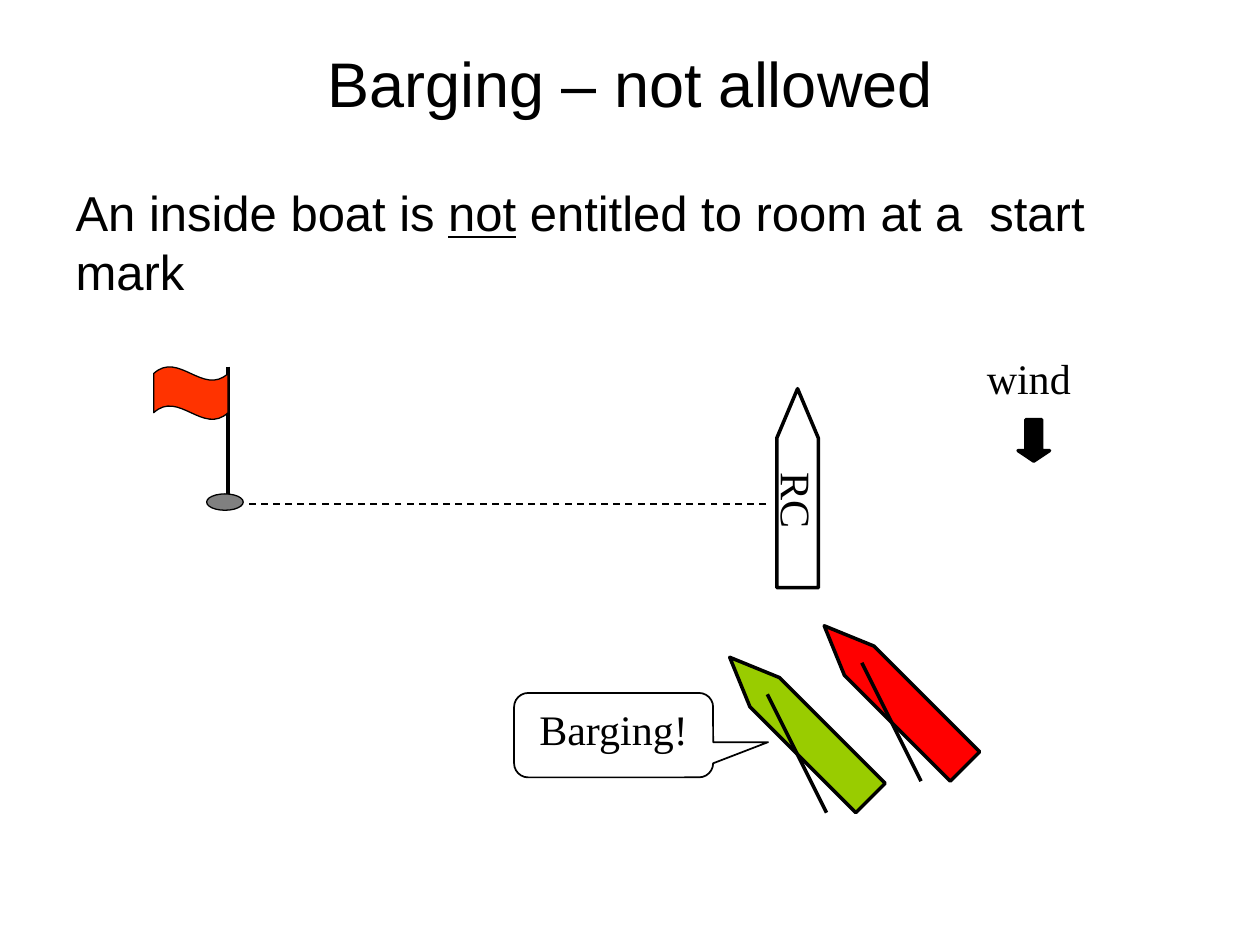
from pptx import Presentation
from pptx.dml.color import RGBColor
from pptx.enum.dml import MSO_LINE
from pptx.enum.shapes import MSO_CONNECTOR, MSO_SHAPE
from pptx.enum.text import MSO_ANCHOR, MSO_AUTO_SIZE, PP_ALIGN
from pptx.oxml.ns import qn
from pptx.util import Inches, Pt
from lxml.etree import SubElement

BLACK = "000000"
BOAT_SIZE = (1.58, 0.33)
BOW = 1.188


def color(value):
    return RGBColor.from_string(value)


def place(sp, left, top, width, height):
    sp.left, sp.top = Inches(left), Inches(top)
    sp.width, sp.height = Inches(width), Inches(height)


def write(sp, *parts, font="Times New Roman", size=24, align=PP_ALIGN.CENTER,
          anchor=MSO_ANCHOR.TOP, wrap=True, before=0,
          auto_size=MSO_AUTO_SIZE.NONE):
    """Write one paragraph; each part is a (text, underline) pair."""
    tf = sp.text_frame
    tf.word_wrap, tf.vertical_anchor, tf.auto_size = wrap, anchor, auto_size
    p = tf.paragraphs[0]
    p.alignment, p.space_before = align, Pt(before)
    for text, underline in parts:
        r = p.add_run()
        r.text = text
        r.font.name, r.font.size = font, Pt(size)
        r.font.underline = underline
        r.font.color.rgb = color(BLACK)
    return p


def remove_bullet(p):
    pPr = p._p.get_or_add_pPr()
    pPr.set("marL", "0")
    pPr.set("indent", "0")
    SubElement(pPr, qn("a:buNone"))


def add_shape(shapes, kind, left, top, width, height, fill=None, line=2,
              rotation=0, adjustments=()):
    sp = shapes.add_shape(kind, Inches(left), Inches(top),
                          Inches(width), Inches(height))
    sp.shadow.inherit = False
    sp.rotation = rotation
    for i, value in enumerate(adjustments):
        sp.adjustments[i] = value
    if fill:
        sp.fill.solid()
        sp.fill.fore_color.rgb = color(fill)
    else:
        sp.fill.background()
    sp.line.color.rgb = color(BLACK)
    sp.line.width = Pt(line)
    return sp


def add_line(shapes, x1, y1, x2, y2, width=2, dash=None):
    line = shapes.add_connector(MSO_CONNECTOR.STRAIGHT, Inches(x1), Inches(y1),
                                Inches(x2), Inches(y2))
    line.line.color.rgb = color(BLACK)
    line.line.width = Pt(width)
    if dash:
        line.line.dash_style = dash
    SubElement(line._element.spPr, qn("a:effectLst"))


def add_sailboat(s, left, top, fill):
    """Add a hull heading up and left, with its sail."""
    shapes = s.shapes.add_group_shape().shapes
    add_shape(shapes, MSO_SHAPE.PENTAGON, left, top, *BOAT_SIZE, fill=fill,
              rotation=225, adjustments=[BOW])
    add_line(shapes, left + 0.53, top - 0.1, left + 1, top + 0.84)


def add_committee_boat(s):
    sp = add_shape(s.shapes, MSO_SHAPE.PENTAGON, 5.54, 3.71, *BOAT_SIZE,
                   rotation=270, adjustments=[BOW])
    # The vertical flip turns the label to read downwards.
    sp._element.spPr.xfrm.set("flipV", "1")
    write(sp, ("RC", False), anchor=MSO_ANCHOR.MIDDLE, wrap=False)


def add_flag_mark(s):
    shapes = s.shapes.add_group_shape().shapes
    add_line(shapes, 1.81, 2.91, 1.81, 3.92, width=2.25)
    add_shape(shapes, MSO_SHAPE.OVAL, 1.64, 3.92, 0.29, 0.13,
              fill="808080", line=0.75)
    add_shape(shapes, MSO_SHAPE.WAVE, 1.22, 2.91, 0.59, 0.42,
              fill="FF3300", line=0.75, adjustments=[0.13, 0])


def add_wind(s):
    add_shape(s.shapes, MSO_SHAPE.DOWN_ARROW, 8.08, 3.33, 0.25, 0.33,
              fill=BLACK, adjustments=[0.5, 0.333])
    label = s.shapes.add_textbox(Inches(7.5), Inches(2.75),
                                 Inches(1.33), Inches(0.5))
    write(label, ("wind", False), before=12,
          auto_size=MSO_AUTO_SIZE.SHAPE_TO_FIT_TEXT)


def add_callout(s):
    sp = add_shape(s.shapes, MSO_SHAPE.ROUNDED_RECTANGULAR_CALLOUT,
                   4.08, 5.5, 1.58, 0.67, line=1,
                   adjustments=[0.776, 0.083, 0.167])
    write(sp, ("Barging!", False))


def main():
    prs = Presentation()
    prs.slide_width, prs.slide_height = Inches(10), Inches(7.5)
    s = prs.slides.add_slide(prs.slide_layouts[1])

    title, body = s.placeholders
    place(title, 0.5, 0.3, 9, 1.25)
    write(title, ("Barging – not allowed", False), font="Arial", size=36)
    place(body, 0.5, 1.4, 9, 4.95)
    p = write(body, ("An inside boat is ", False), ("not", True),
              (" entitled to room at a  start mark", False),
              font="Arial", size=28, align=PP_ALIGN.LEFT, before=5.6)
    remove_bullet(p)

    add_sailboat(s, 5.56, 5.61, "99CC00")
    add_sailboat(s, 6.31, 5.36, "FF0000")
    add_wind(s)
    add_callout(s)
    add_line(s.shapes, 6.08, 4, 1.83, 4, width=1, dash=MSO_LINE.DASH)
    add_committee_boat(s)
    add_flag_mark(s)
    prs.save("out.pptx")


if __name__ == "__main__":
    main()
